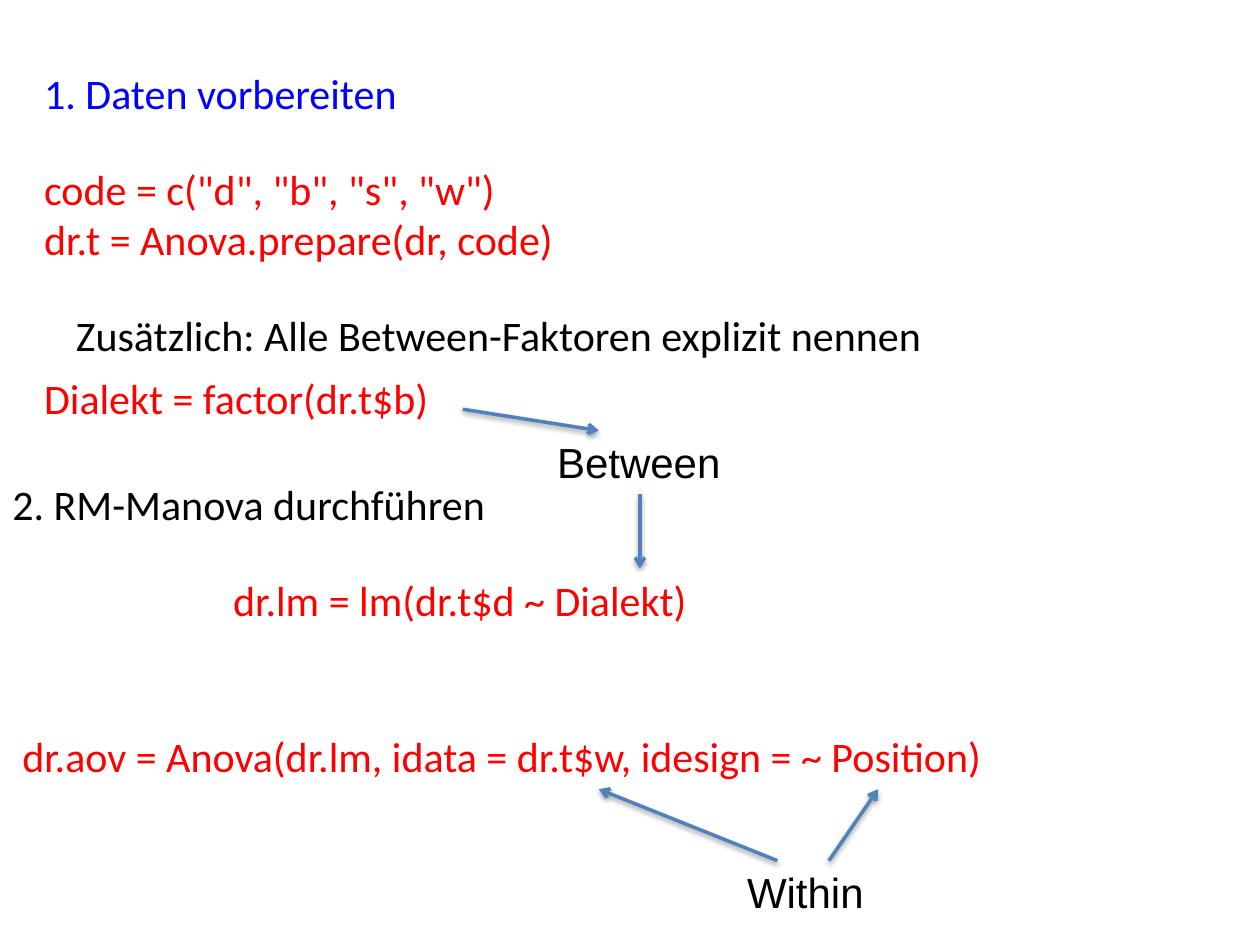
from lxml import etree
from pptx import Presentation, util as u
from pptx.dml.color import RGBColor
from pptx.enum import shapes, text
from pptx.oxml import parse_xml
from pptx.oxml.ns import nsdecls, qn

BLACK = RGBColor(0x00, 0x00, 0x00)
BLUE = RGBColor(0x00, 0x00, 0xFF)
RED = RGBColor(0xFF, 0x00, 0x00)
STEEL = RGBColor(0x4F, 0x81, 0xBD)
LINE_HEIGHT = 1.27
SHADOW = (
    f'<a:effectLst {nsdecls("a")}>'
    '<a:outerShdw blurRad="40000" dist="20000" dir="5400000" rotWithShape="0">'
    '<a:srgbClr val="000000"><a:alpha val="38000"/></a:srgbClr>'
    '</a:outerShdw></a:effectLst>'
)


def add_text(slide, box, left, top, width, *lines, height=LINE_HEIGHT,
             color=RED, font="Calibri", size=24, wrap=True):
    """Place lines of text at an offset in centimetres from the box corner."""
    label = slide.shapes.add_textbox(
        u.Cm(box[0] + left), u.Cm(box[1] + top), u.Cm(width), u.Cm(height))
    frame = label.text_frame
    frame.word_wrap = wrap
    frame.auto_size = text.MSO_AUTO_SIZE.SHAPE_TO_FIT_TEXT
    frame.text = "\n".join(lines)
    for paragraph in frame.paragraphs:
        style = paragraph.runs[0].font
        style.name, style.size = font, u.Pt(size)
        style.color.rgb = color
    return label


def add_arrow(slide, box, start, end, source=None):
    """Draw a shadowed arrow, optionally joined to the bottom of its source."""
    points = [u.Cm(box[axis] + point[axis])
              for point in (start, end) for axis in (0, 1)]
    arrow = slide.shapes.add_connector(shapes.MSO_CONNECTOR.STRAIGHT, *points)
    if source is not None:
        arrow.begin_connect(source, 2)
    arrow.line.color.rgb = STEEL
    arrow.line.width = u.Pt(2)
    properties = arrow._element.spPr
    etree.SubElement(properties.find(qn("a:ln")), qn("a:tailEnd"), type="arrow")
    properties.append(parse_xml(SHADOW))


def add_preparation(slide, box):
    """Build the data preparation step and return its Between label."""
    add_text(slide, box, 0, 0, 8.69, "1. Daten vorbereiten", color=BLUE)
    add_text(slide, box, 0, 1.93, 11.43, 'code = c("d", "b", "s", "w")',
             "dr.t = Anova.prepare(dr, code)", height=2.31)
    add_text(slide, box, 0.64, 4.88, 20.32,
             "Zusätzlich: Alle Between-Faktoren explizit nennen", color=BLACK)
    add_text(slide, box, 0, 6.15, 9.53, "Dialekt = factor(dr.t$b)")
    between = add_text(slide, box, 10.34, 7.44, 3.84, "Between",
                       color=BLACK, font="Arial", wrap=False)
    add_arrow(slide, box, (8.69, 7.01), (11.43, 7.44))
    return between


def add_manova(slide, box, between):
    """Build the RM-Manova step with its factor arrows."""
    add_text(slide, box, 0, 0, 14.81, "2. RM-Manova durchführen", color=BLACK)
    add_text(slide, box, 4.45, 1.93, 12.27, "dr.lm = lm(dr.t$d ~ Dialekt)")
    add_text(slide, box, 0.2, 5.08, 23.7,
             "dr.aov = Anova(dr.lm, idata = dr.t$w, idesign = ~ Position)")
    add_text(slide, box, 14.81, 7.82, 2.9, "Within",
             color=BLACK, font="Arial", wrap=False)
    add_arrow(slide, box, (12.9, 0.43), (12.9, 1.93), source=between)
    for start, end in ((16.71, 17.7), (15.67, 12.07)):
        add_arrow(slide, box, (start, 7.82), (end, 6.38))


def main():
    """Assemble and save the slide."""
    deck = Presentation()
    deck.slide_width, deck.slide_height = u.Cm(25.4), u.Cm(19.05)
    slide = deck.slides.add_slide(deck.slide_layouts[6])
    between = add_preparation(slide, (0.64, 1.24))
    add_manova(slide, (0, 9.53), between)
    deck.save("out.pptx")


if __name__ == "__main__":
    main()
